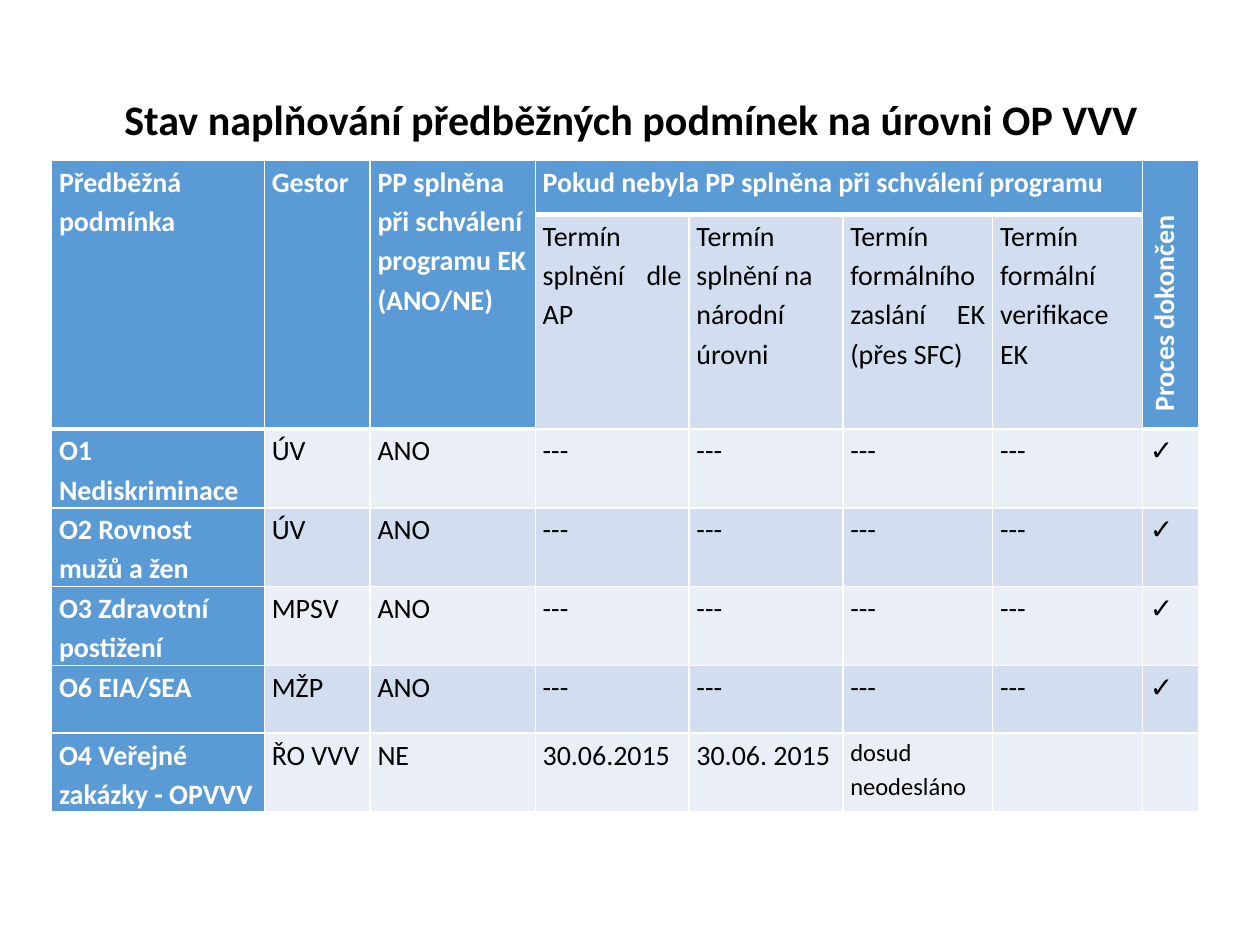
from lxml import etree
from pptx import Presentation
from pptx.dml.color import RGBColor
from pptx.enum.text import MSO_ANCHOR, MSO_AUTO_SIZE, PP_ALIGN
from pptx.oxml.ns import qn
from pptx.util import Cm, Pt

LEFT, CENTER, JUSTIFY = PP_ALIGN.LEFT, PP_ALIGN.CENTER, PP_ALIGN.JUSTIFY
TOP, MIDDLE = MSO_ANCHOR.TOP, MSO_ANCHOR.MIDDLE
NO_AUTOFIT = MSO_AUTO_SIZE.NONE
BLACK = RGBColor(0x00, 0x00, 0x00)
WHITE = RGBColor(0xFF, 0xFF, 0xFF)
BLUE = RGBColor(0x5B, 0x9B, 0xD5)
BANDS = RGBColor(0xEA, 0xEF, 0xF7), RGBColor(0xD2, 0xDE, 0xEF)

COLUMN_WIDTHS = [4.29, 2.13, 3.33, 3.1, 3.1, 3.02, 3.02, 1.14]
ROW_HEIGHTS = [1.09, 4.33, 1.56, 1.56, 1.56, 1.37, 1.56]
NOT_NEEDED = ["---"] * 4
ROWS = [
    ["Předběžná podmínka", "Gestor", "PP splněna při schválení programu EK (ANO/NE)",
     "Pokud nebyla PP splněna při schválení programu", "", "", "", "Proces dokončen"],
    ["", "", "", "Termín splnění dle AP", "Termín splnění na národní úrovni",
     "Termín formálního zaslání EK (přes SFC)", "Termín formální verifikace EK", ""],
    ["O1 Nediskriminace", "ÚV", "ANO", *NOT_NEEDED, "✓"],
    ["O2 Rovnost mužů a žen", "ÚV", "ANO", *NOT_NEEDED, "✓"],
    ["O3 Zdravotní postižení", "MPSV", "ANO", *NOT_NEEDED, "✓"],
    ["O6 EIA/SEA", "MŽP", "ANO", *NOT_NEEDED, "✓"],
    ["O4 Veřejné zakázky - OPVVV", "ŘO VVV", "NE", "30.06.2015", "30.06. 2015",
     "dosud neodesláno", "", ""],
]
TALL_HEADERS = (0, 1, 2, 7)
MERGES = [((0, column), (1, column)) for column in TALL_HEADERS] + [((0, 3), (0, 6))]
LEFT_ALIGNED = {(0, 1), (0, 2), (0, 7), (1, 4)}
SMALL_TEXT = {(6, 5)}
VERTICAL = (0, 7)


def set_values(target, values):
    for name, value in values.items():
        setattr(target, name, value)


def is_header(row, column):
    return row == 0 or (row == 1 and column in TALL_HEADERS)


class SlideBuilder:
    font = "Calibri"

    def __init__(self, slide):
        self.slide = slide

    def add_text(self, frame, text, size, color, bold, align, spacing=1.0):
        para = frame.paragraphs[0]
        set_values(para, {"alignment": align, "line_spacing": spacing})
        span = para.add_run()
        span.text = text
        set_values(span.font, {"name": self.font, "size": Pt(size), "bold": bold})
        span.font.color.rgb = color
        return para

    def title(self, text, left, top, width, height):
        box = self.slide.shapes.title
        set_values(box, {"left": Cm(left), "top": Cm(top),
                         "width": Cm(width), "height": Cm(height)})
        set_values(box.text_frame, {"vertical_anchor": TOP, "word_wrap": True,
                                    "auto_size": NO_AUTOFIT})
        self.add_text(box.text_frame, text, 24, BLACK, True, CENTER)

    def borders(self, cell, weights):
        """Draw white cell edges; weights maps L, R, T and B to points."""
        properties = cell._tc.get_or_add_tcPr()
        for side, weight in weights.items():
            line = etree.SubElement(properties, qn(f"a:ln{side}"), w=str(Pt(weight)))
            fill = etree.SubElement(line, qn("a:solidFill"))
            etree.SubElement(fill, qn("a:srgbClr"), val=str(WHITE))

    def cell(self, cell, row, column, text):
        set_values(cell, {"margin_left": Cm(0.15), "margin_right": Cm(0.15),
                          "margin_top": 0, "margin_bottom": 0})
        header = is_header(row, column)
        below_header = row > 0 and is_header(row - 1, column)
        self.borders(cell, {"L": 1, "R": 1, "T": 3 if below_header else 1,
                            "B": 3 if header else 1})
        row_label = row > 1 and column == 0
        strong = header or row_label
        cell.fill.solid()
        cell.fill.fore_color.rgb = BLUE if strong else BANDS[row % 2]
        if not text:
            return
        place = (row, column)
        para = self.add_text(cell.text_frame, text, 14 if place in SMALL_TEXT else 16,
                             WHITE if strong else BLACK, strong,
                             LEFT if row_label or place in LEFT_ALIGNED else JUSTIFY, 1.15)
        if place == VERTICAL:
            cell.vertical_anchor = MIDDLE
            cell._tc.get_or_add_tcPr().set("vert", "vert270")
            para._p.get_or_add_pPr().set("marL", str(Cm(0.2)))

    def table(self, rows, left, top):
        frame = self.slide.shapes.add_table(
            len(rows), len(COLUMN_WIDTHS), Cm(left), Cm(top),
            Cm(sum(COLUMN_WIDTHS)), Cm(sum(ROW_HEIGHTS)))
        table = frame.table
        for column, width in zip(table.columns, COLUMN_WIDTHS):
            column.width = Cm(width)
        for row, height in zip(table.rows, ROW_HEIGHTS):
            row.height = Cm(height)
        for row, texts in enumerate(rows):
            for column, text in enumerate(texts):
                self.cell(table.cell(row, column), row, column, text)
        for first, last in MERGES:
            table.cell(*first).merge(table.cell(*last))


def main():
    deck = Presentation()
    deck.slide_width, deck.slide_height = Cm(25.4), Cm(19.05)
    page = SlideBuilder(deck.slides.add_slide(deck.slide_layouts[5]))
    page.title("Stav naplňování předběžných podmínek na úrovni OP VVV", 1.42, 1.75, 22.6, 1.4)
    page.table(ROWS, 1.04, 3.23)
    deck.save("out.pptx")


if __name__ == "__main__":
    main()
